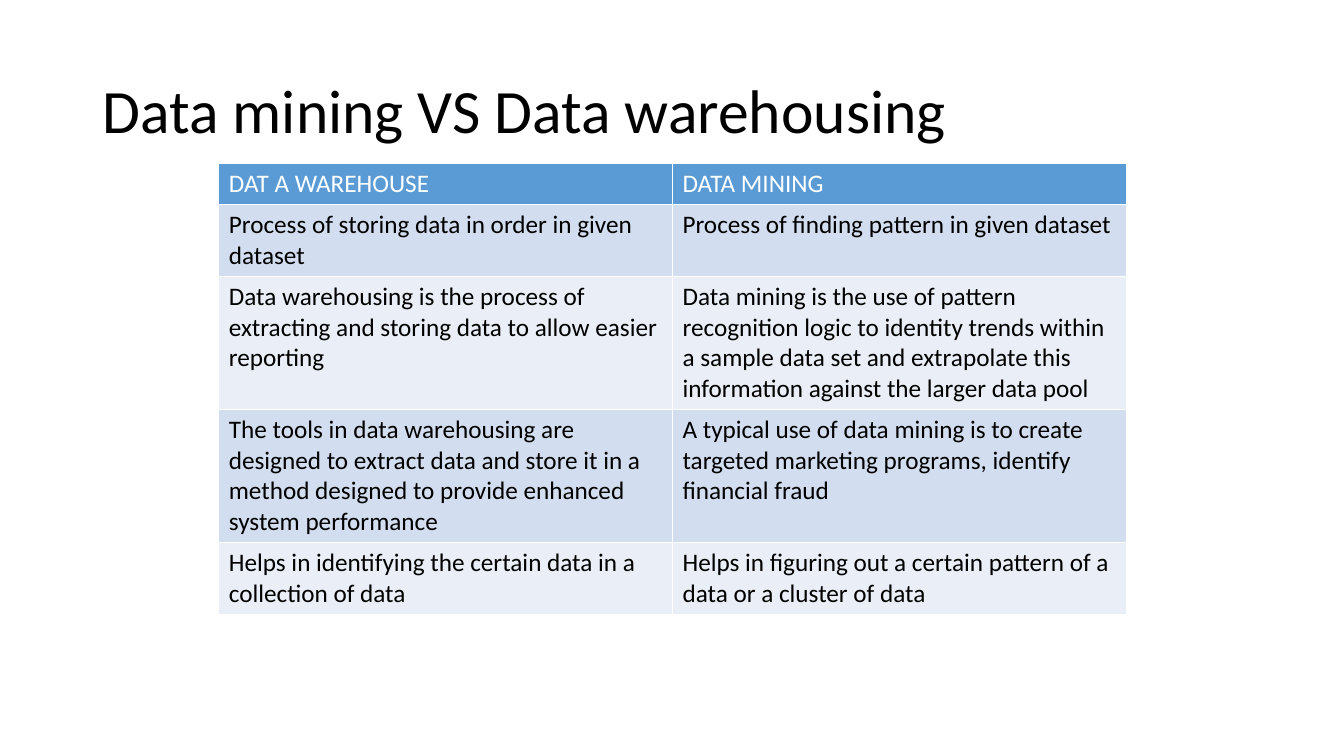
from lxml import etree
from pptx import Presentation
from pptx.dml.color import RGBColor
from pptx.enum.text import MSO_ANCHOR
from pptx.oxml.ns import qn
from pptx.util import Inches, Pt

MIDDLE = MSO_ANCHOR.MIDDLE
FONT = "Calibri"
COLORS = {
    "text": "000000",
    "header_text": "FFFFFF",
    "border": "FFFFFF",
    "header": "5B9BD5",
    "odd_row": "D2DEEF",
    "even_row": "EAEFF7",
}
ROW_HEIGHT = 0.41

TITLE = "Data mining VS Data warehousing"
COMPARISON = [
    ("DAT A WAREHOUSE", "DATA MINING"),
    ("Process of storing data in order in given dataset",
     "Process of finding pattern in given dataset"),
    ("Data warehousing is the process of extracting and storing data to allow "
     "easier reporting",
     "Data mining is the use of pattern recognition logic to identity trends "
     "within a sample data set and extrapolate this information against the "
     "larger data pool"),
    ("The tools in data warehousing are designed to extract data and store it "
     "in a method designed to provide enhanced system performance",
     "A typical use of data mining is to create targeted marketing programs, "
     "identify financial fraud"),
    ("Helps in identifying the certain data in a collection of data",
     "Helps in figuring out a certain pattern of a data or a cluster of data"),
]


def rgb(name):
    return RGBColor.from_string(COLORS[name])


def set_font(paragraph, size, color):
    paragraph.font.name = FONT
    paragraph.font.size = Pt(size)
    paragraph.font.bold = False
    paragraph.font.color.rgb = rgb(color)


def add_borders(cell, width):
    properties = cell._tc.get_or_add_tcPr()
    for side in ("a:lnL", "a:lnR", "a:lnT", "a:lnB"):
        line = etree.SubElement(properties, qn(side), w=str(Pt(width)))
        fill = etree.SubElement(line, qn("a:solidFill"))
        etree.SubElement(fill, qn("a:srgbClr"), val=COLORS["border"])


def add_title(slide, left, top, width, height):
    box = slide.shapes.add_textbox(
        Inches(left), Inches(top), Inches(width), Inches(height))
    frame = box.text_frame
    frame.word_wrap = True
    frame.vertical_anchor = MIDDLE
    frame.text = TITLE
    paragraph = frame.paragraphs[0]
    paragraph.line_spacing = 0.9
    set_font(paragraph, 44, "text")


def add_comparison(slide, left, top, width):
    # Rows start at one line and grow with their text
    row_count, column_count = len(COMPARISON), len(COMPARISON[0])
    table = slide.shapes.add_table(
        row_count, column_count, Inches(left), Inches(top), Inches(width),
        Inches(ROW_HEIGHT * row_count)).table

    for row_index, texts in enumerate(COMPARISON):
        if row_index == 0:
            fill_color, text_color = "header", "header_text"
        else:
            fill_color = "odd_row" if row_index % 2 else "even_row"
            text_color = "text"
        for column_index, text in enumerate(texts):
            cell = table.cell(row_index, column_index)
            cell.text = text
            set_font(cell.text_frame.paragraphs[0], 18, text_color)
            add_borders(cell, 1)
            cell.fill.solid()
            cell.fill.fore_color.rgb = rgb(fill_color)


def main():
    presentation = Presentation()
    presentation.slide_width = Inches(13.33)
    presentation.slide_height = Inches(7.5)
    slide = presentation.slides.add_slide(presentation.slide_layouts[6])
    add_comparison(slide, 2.17, 1.62, 9)
    add_title(slide, 0.92, 0.4, 11.5, 1.45)
    presentation.save("out.pptx")


if __name__ == "__main__":
    main()
